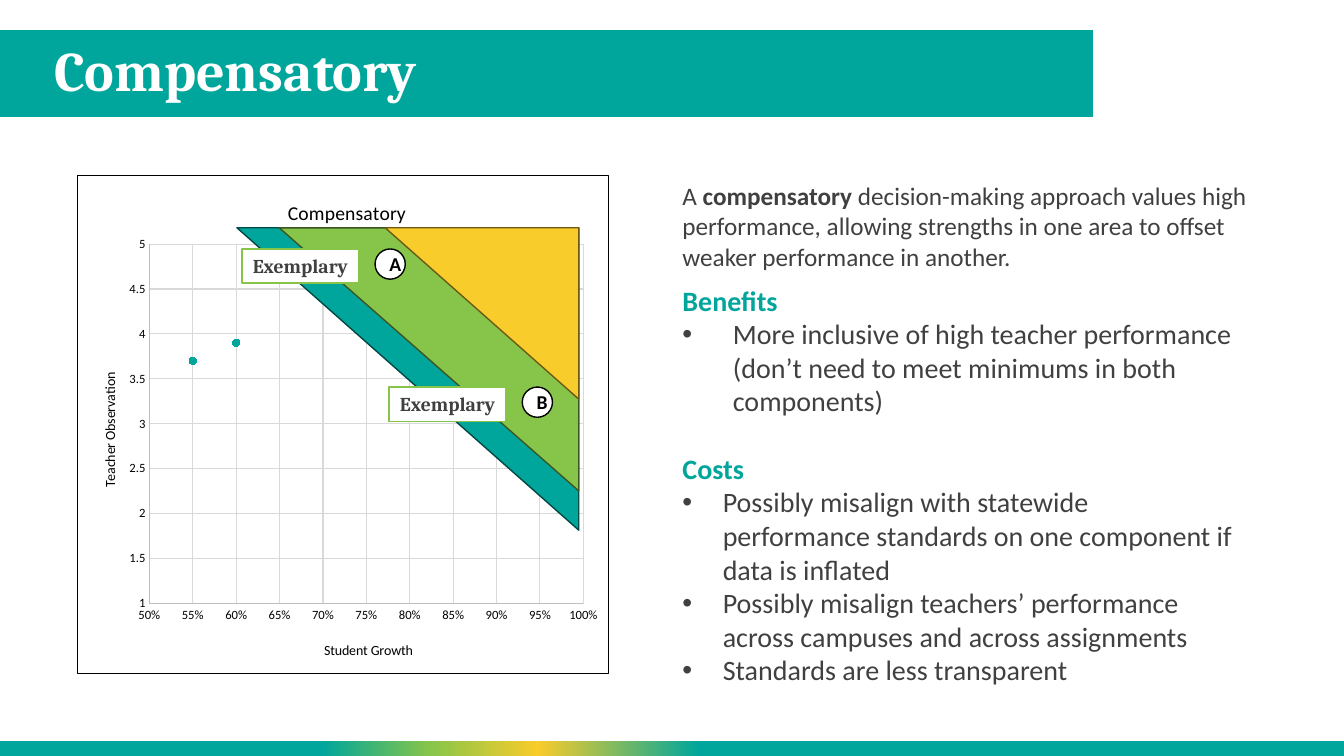
import pptx
import pptx.chart.data
import pptx.dml.color
import pptx.enum.chart
import pptx.enum.shapes
import pptx.enum.text
import pptx.oxml
import pptx.util
from pptx.util import Inches

COLORS = {"teal": "00A69B", "green": "87C54A", "yellow": "F8CC2B", "white": "FFFFFF",
          "black": "000000", "text": "404040", "grid": "D9D9D9", "axis": "BFBFBF",
          "teal_edge": "004944", "green_edge": "3B5620", "yellow_edge": "6D5913"}
HEADING = "Compensatory"
INTRO = [("A ", False), ("compensatory", True),
         (" decision-making approach values high performance, allowing strengths in one area "
          "to offset weaker performance in another.", False)]
SECTIONS = [
    ("Benefits", 0.5, ["More inclusive of high teacher performance (don’t need to meet minimums "
                       "in both components)"]),
    ("Costs", 0.4, ["Possibly misalign with statewide performance standards on one component "
                    "if data is inflated",
                    "Possibly misalign teachers’ performance across campuses and across assignments",
                    "Standards are less transparent"]),
]
SCORES = [(0.55, 3.7), (0.6, 3.9), (0.7, 4.5)]
BANDS = [("teal", 3.39, 3), ("green", 2.97, 2.61), ("yellow", 1.92, 1.7)]
BAND_RIGHT, BAND_TOP = 5.74, 2.26
TEACHERS = [("A", 3.72, 2.47), ("B", 5.18, 3.84)]
RATING, RATING_OFFSET = "Exemplary", 1.32
FOOTER_STOPS = [(0, "teal"), (24, "teal"), (32, "green"), (40, "yellow"), (52, "teal"), (100, "teal")]
SHAPES = pptx.enum.shapes.MSO_SHAPE
MIDDLE = pptx.enum.text.MSO_ANCHOR.MIDDLE
CENTER = pptx.enum.text.PP_ALIGN.CENTER
NS = ('xmlns:a="http://schemas.openxmlformats.org/drawingml/2006/main" '
      'xmlns:c="http://schemas.openxmlformats.org/drawingml/2006/chart"')
C = "{http://schemas.openxmlformats.org/drawingml/2006/chart}"


def rgb(name):
    return pptx.dml.color.RGBColor.from_string(COLORS[name])


def xml(text):
    return pptx.oxml.parse_xml(text.replace(">", f" {NS}>", 1) if "/>" not in text.split(">")[0] + ">"
                               else text.replace("/>", f" {NS}/>", 1))


def write(paragraph, text, size=20, color="text", bold=False, font="Calibri", align=None):
    run = paragraph.add_run()
    run.text = text
    run.font.size = pptx.util.Pt(size)
    run.font.name = font
    run.font.bold = bold
    run.font.color.rgb = rgb(color)
    if align is not None:
        paragraph.alignment = align


def add_box(slide, left, top, width, height):
    frame = slide.shapes.add_textbox(*map(Inches, (left, top, width, height))).text_frame
    frame.word_wrap = True
    return frame


def add_shape(slide, kind, left, top, width, height, fill, edge=None):
    shape = slide.shapes.add_shape(kind, *map(Inches, (left, top, width, height)))
    shape.shadow.inherit = False
    shape.fill.solid()
    shape.fill.fore_color.rgb = rgb(fill)
    if edge:
        shape.line.color.rgb = rgb(edge)
        shape.line.width = pptx.util.Pt(1)
    else:
        shape.line.fill.background()
    return shape


def add_footer(slide):
    footer = add_shape(slide, SHAPES.RECTANGLE, 0, 7.35, 13.33, 0.15, "teal")
    stops = "".join(f'<a:gs pos="{pos * 1000}"><a:srgbClr val="{COLORS[name]}"/></a:gs>'
                    for pos, name in FOOTER_STOPS)
    gradient = xml(f'<a:gradFill><a:gsLst>{stops}</a:gsLst><a:lin ang="0" scaled="0"/></a:gradFill>')
    solid = footer.fill._xPr.solidFill
    solid.getparent().replace(solid, gradient)


def place(element, index, **fractions):
    for old in element.findall(C + "layout"):
        element.remove(old)
    target = '<c:layoutTarget val="inner"/>' if "w" in fractions else ""
    modes = '<c:xMode val="edge"/><c:yMode val="edge"/>'
    values = "".join(f'<c:{key} val="{value}"/>' for key, value in fractions.items())
    element.insert(index, xml(f"<c:layout><c:manualLayout>{target}{modes}{values}"
                              "</c:manualLayout></c:layout>"))


def add_title(title, text, size, x, y):
    write(title.text_frame.paragraphs[0], text, size=size, color="black")
    place(title._element, 1, x=x, y=y)


def format_axis(axis, low, high, step, number_format):
    axis.minimum_scale, axis.maximum_scale, axis.major_unit = low, high, step
    axis.has_major_gridlines = True
    for line, color in ((axis.major_gridlines.format.line, "grid"), (axis.format.line, "axis")):
        line.color.rgb = rgb(color)
        line.width = pptx.util.Pt(0.75)
    axis.major_tick_mark = axis.minor_tick_mark = pptx.enum.chart.XL_TICK_MARK.NONE
    labels = axis.tick_labels
    labels.number_format, labels.number_format_is_linked = number_format, False
    labels.font.size = pptx.util.Pt(9)
    labels.font.color.rgb = rgb("black")


def add_scores(slide):
    data = pptx.chart.data.XyChartData()
    points = data.add_series("Series 1")
    for growth, observation in SCORES:
        points.add_data_point(growth, observation)
    chart = slide.shapes.add_chart(pptx.enum.chart.XL_CHART_TYPE.XY_SCATTER,
                                   *map(Inches, (0.76, 1.74, 5.28, 4.95)), data).chart
    chart.has_legend = False
    chart.font.size = pptx.util.Pt(10)
    chart.font.name = "Calibri"
    chart.font.color.rgb = rgb("black")
    plot = chart.plots[0]
    plot.vary_by_categories = False
    series = plot.series[0]
    series.format.line.fill.background()
    series.marker.style = pptx.enum.chart.XL_MARKER_STYLE.CIRCLE
    series.marker.size = 5
    series.marker.format.fill.solid()
    series.marker.format.fill.fore_color.rgb = rgb("teal")
    series.marker.format.line.color.rgb = rgb("teal")
    format_axis(chart.category_axis, 0.5, 1, 0.05, "0%")
    format_axis(chart.value_axis, 1, 5, 0.5, "General")
    chart.has_title = True
    add_title(chart.chart_title, HEADING, 14, 0.39, 0.04)
    add_title(chart.category_axis.axis_title, "Student Growth", 10, 0.46, 0.93)
    add_title(chart.value_axis.axis_title, "Teacher Observation", 10, 0.04, 0.39)
    body = chart._chartSpace.find(C + "chart")
    place(body.find(C + "plotArea"), 0, x=0.136, y=0.137, w=0.817, h=0.722)
    body.addnext(xml(f'<c:spPr><a:solidFill><a:srgbClr val="{COLORS["white"]}"/></a:solidFill>'
                     f'<a:ln w="9525"><a:solidFill><a:srgbClr val="{COLORS["black"]}"/>'
                     '</a:solidFill></a:ln></c:spPr>'))


def add_bands(slide):
    for name, width, height in BANDS:
        band = add_shape(slide, SHAPES.RIGHT_TRIANGLE, BAND_RIGHT - width, BAND_TOP,
                         width, height, name, name + "_edge")
        band.rotation = 180
    for letter, left, top in TEACHERS:
        badge = add_shape(slide, SHAPES.OVAL, left, top, 0.3, 0.3, "white", "black").text_frame
        badge.vertical_anchor = MIDDLE
        write(badge.paragraphs[0], letter, size=14, color="black", bold=True, align=CENTER)
        rating = add_shape(slide, SHAPES.RECTANGLE, left - RATING_OFFSET, top, 1.16, 0.34,
                           "white", "green").text_frame
        rating.word_wrap = True
        rating.vertical_anchor = pptx.enum.text.MSO_ANCHOR.TOP
        write(rating.paragraphs[0], RATING, size=14, bold=True, font="Cambria", align=CENTER)


def add_sections(slide):
    frame = add_box(slide, 6.67, 2.76, 5.69, 3.47)
    for number, (heading, indent, points) in enumerate(SECTIONS):
        paragraph = frame.add_paragraph() if number else frame.paragraphs[0]
        if number:
            paragraph.space_before = pptx.util.Pt(24)
        write(paragraph, heading, color="teal", bold=True)
        for point in points:
            paragraph = frame.add_paragraph()
            properties = paragraph._p.get_or_add_pPr()
            properties.set("marL", str(Inches(indent)))
            properties.set("indent", str(-Inches(indent)))
            properties.append(xml(f'<a:buClr><a:srgbClr val="{COLORS["text"]}"/></a:buClr>'))
            properties.append(xml('<a:buFont typeface="Arial"/>'))
            properties.append(xml('<a:buChar char="•"/>'))
            write(paragraph, point)


def main():
    """Build the slide on the compensatory approach and save it."""
    deck = pptx.Presentation()
    deck.slide_width, deck.slide_height = Inches(13.33), Inches(7.5)
    slide = deck.slides.add_slide(deck.slide_layouts[6])
    add_shape(slide, SHAPES.RECTANGLE, 0, 0.3, 10.84, 0.86, "teal")
    add_footer(slide)
    title = add_box(slide, 0.44, 0.3, 10.41, 0.86)
    title.vertical_anchor = MIDDLE
    title.paragraphs[0].line_spacing = 0.9
    write(title.paragraphs[0], HEADING, size=40, color="white", bold=True, font="Cambria")
    add_sections(slide)
    intro = add_box(slide, 6.67, 1.74, 6.07, 1.01).paragraphs[0]
    for text, bold in INTRO:
        write(intro, text, size=18, bold=bold)
    add_scores(slide)
    add_bands(slide)
    deck.save("out.pptx")


if __name__ == "__main__":
    main()
